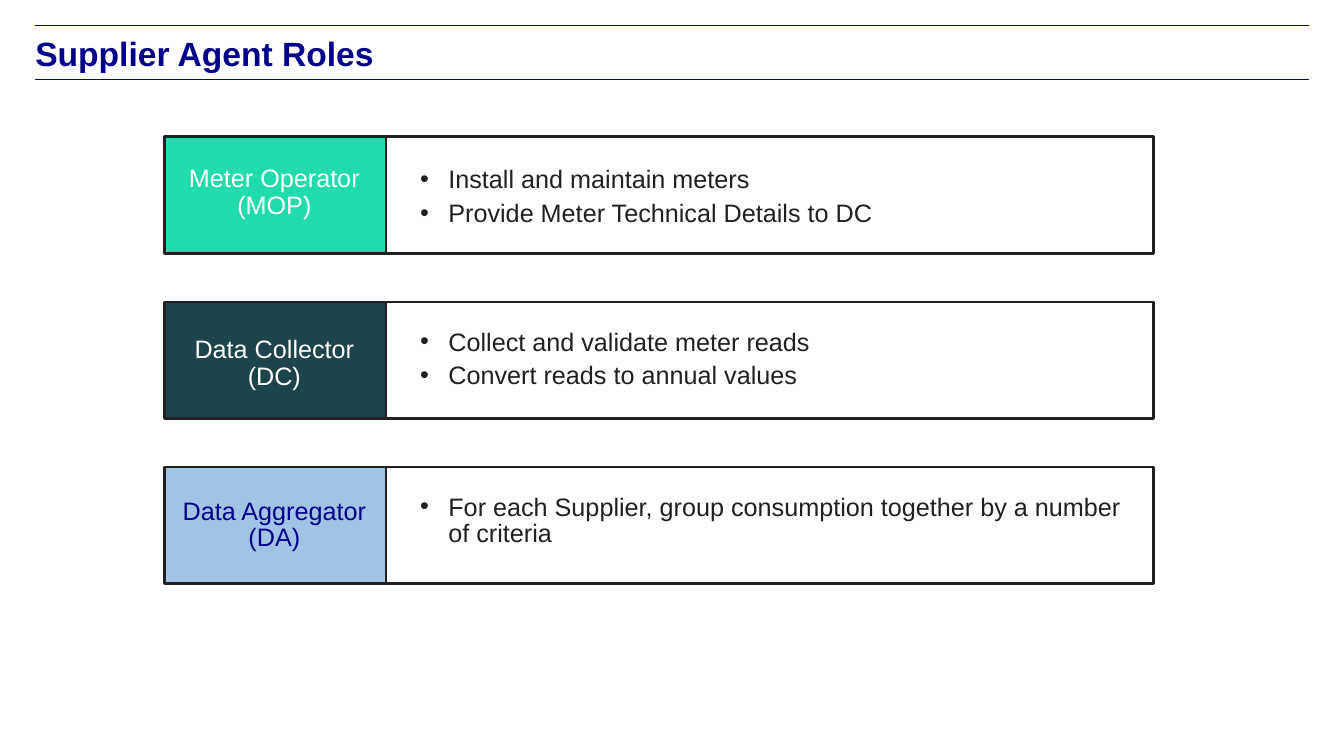
from pptx import Presentation
from pptx.dml.color import RGBColor
from pptx.enum.shapes import MSO_CONNECTOR, MSO_SHAPE
from pptx.enum.text import MSO_ANCHOR, MSO_AUTO_SIZE, PP_ALIGN
from pptx.oxml.ns import qn
from pptx.util import Cm, Pt
from lxml.etree import SubElement

NAVY = RGBColor(0x00, 0x00, 0x8B)
INK = RGBColor(0x23, 0x1F, 0x20)
WHITE = RGBColor(0xFF, 0xFF, 0xFF)
GREEN = RGBColor(0x21, 0xDB, 0xAD)
TEAL = RGBColor(0x1C, 0x44, 0x4C)
SKY = RGBColor(0xA0, 0xC4, 0xE5)

ROLES = [
    dict(label="Meter Operator\n(MOP)", fill=GREEN, color=WHITE, label_drop=0.74, list_drop=0.76,
         duties=["Install and maintain meters", "Provide Meter Technical Details to DC"]),
    dict(label="Data Collector\n(DC)", fill=TEAL, color=WHITE, label_drop=0.89, list_drop=0.69,
         duties=["Collect and validate meter reads", "Convert reads to annual values"]),
    dict(label="Data Aggregator\n(DA)", fill=SKY, color=NAVY, label_drop=0.79, list_drop=0.69,
         duties=["For each Supplier, group consumption together by a number of criteria"]),
]


def place(shape, left, top, width, height):
    shape.left, shape.top, shape.width, shape.height = Cm(left), Cm(top), Cm(width), Cm(height)


def write_text(shape, lines, size=18, color=INK, bold=False, align=PP_ALIGN.LEFT,
               spacing=None, after=0, bullet=False):
    frame = shape.text_frame
    frame.word_wrap = True
    frame.auto_size = MSO_AUTO_SIZE.NONE
    frame.vertical_anchor = MSO_ANCHOR.TOP
    frame.margin_left = frame.margin_right = frame.margin_top = frame.margin_bottom = 0
    for index, line in enumerate(lines):
        paragraph = frame.paragraphs[0] if index == 0 else frame.add_paragraph()
        paragraph.text = line
        paragraph.alignment = align
        paragraph.space_before = Pt(0)
        paragraph.space_after = Pt(after)
        if spacing:
            paragraph.line_spacing = Pt(spacing)
        if bullet:
            properties = paragraph._p.get_or_add_pPr()
            properties.set("marL", str(Cm(0.71)))
            properties.set("indent", str(-Cm(0.71)))
            SubElement(properties, qn("a:buFont")).set("typeface", "Arial")
            SubElement(properties, qn("a:buChar")).set("char", "•")
        for run in paragraph.runs:
            run.font.name = "Arial"
            run.font.size = Pt(size)
            run.font.bold = bold
            run.font.color.rgb = color


def add_panel(shapes, left, top, width, height, fill):
    panel = shapes.add_shape(MSO_SHAPE.RECTANGLE, Cm(left), Cm(top), Cm(width), Cm(height))
    panel.shadow.inherit = False
    panel.fill.solid()
    panel.fill.fore_color.rgb = fill
    panel.line.color.rgb = INK
    panel.line.width = Pt(2)


def add_header(slide, left, top, width, height):
    for rule_top in (top, top + height):
        rule = slide.shapes.add_connector(
            MSO_CONNECTOR.STRAIGHT, Cm(left), Cm(rule_top), Cm(left + width), Cm(rule_top))
        rule.line.color.rgb = NAVY
        rule.line.width = Pt(0.5)
        SubElement(rule.element.spPr, qn("a:effectLst"))
    title = slide.shapes.title
    place(title, left, top + 0.18, width, height - 0.18)
    write_text(title, ["Supplier Agent Roles"], size=24, color=NAVY, bold=True)


def add_role(slide, placeholder, role, left, top, width, height):
    panels = slide.shapes.add_group_shape().shapes
    add_panel(panels, left + 0.33, top, width - 0.33, height, WHITE)
    add_panel(panels, left, top, 5.59, height, role["fill"])

    label = slide.shapes.add_textbox(0, 0, 0, 0)
    place(label, left + 0.4, top + role["label_drop"], 4.75, 1.35)
    write_text(label, [role["label"]], color=role["color"], align=PP_ALIGN.CENTER,
               spacing=19.1, after=5.1)

    place(placeholder, left + 6.45, top + role["list_drop"], 18.11, 1.52)
    write_text(placeholder, role["duties"], spacing=19.1, after=5.1, bullet=True)
    placeholder.element.getparent().append(placeholder.element)


def main():
    presentation = Presentation()
    presentation.slide_width = Cm(33.87)
    presentation.slide_height = Cm(19.05)
    slide = presentation.slides.add_slide(presentation.slide_layouts.get_by_name("Comparison"))
    bodies = [shape for shape in slide.placeholders if shape.placeholder_format.idx > 0]

    add_header(slide, 0.89, 0.64, 32.1, 1.37)
    for index, (placeholder, role) in enumerate(zip(bodies, ROLES)):
        add_role(slide, placeholder, role, 4.14, 3.45 + 4.16 * index, 24.94, 2.94)
    for spare in bodies[len(ROLES):]:
        spare.element.getparent().remove(spare.element)

    presentation.save("out.pptx")


if __name__ == "__main__":
    main()
